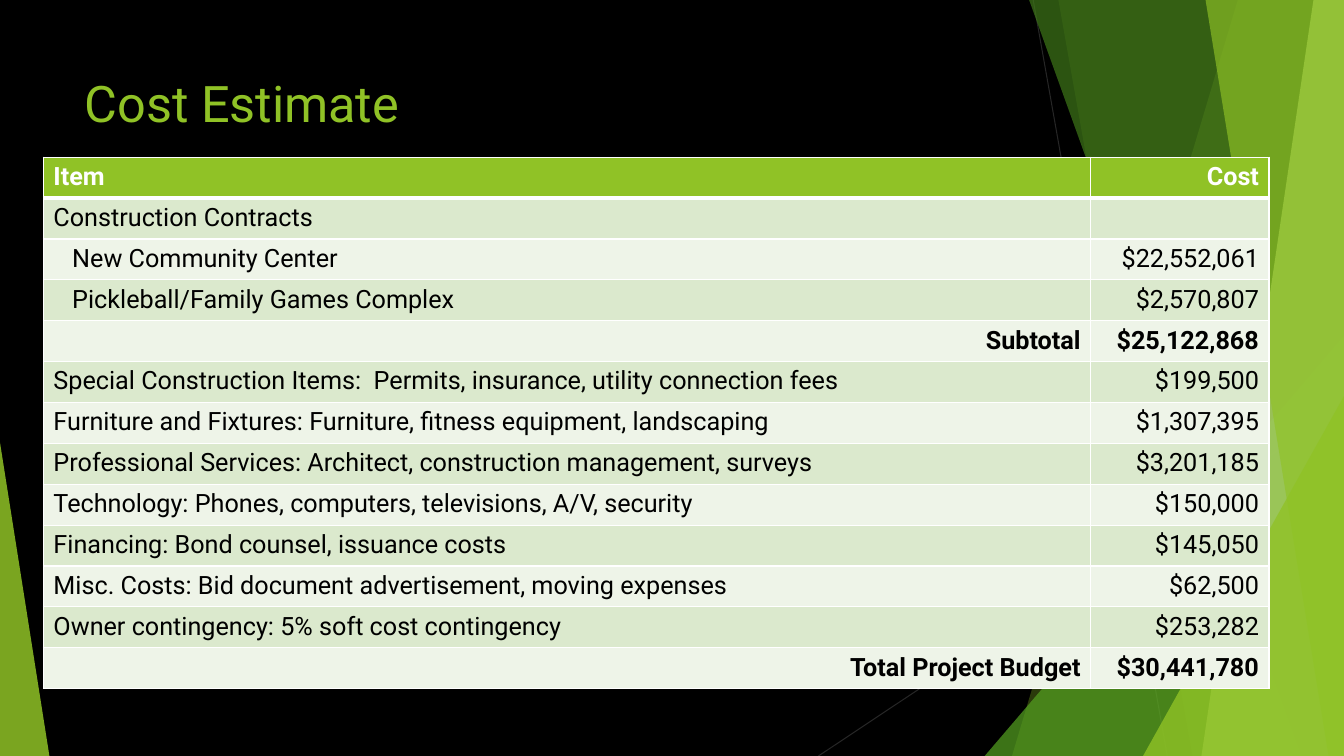
from dataclasses import dataclass

from lxml import etree
from pptx import Presentation
from pptx import util as u
from pptx.dml.color import RGBColor
from pptx.enum import shapes, text
from pptx.oxml import ns


@dataclass(frozen=True)
class Theme:
    font: str = "Roboto"
    title_size: float = 36
    body_size: float = 18
    background: str = "000000"
    dark: str = "000000"
    light: str = "FFFFFF"
    hairline: str = "262626"
    lime: str = "90C226"
    leaf: str = "54A021"
    forest: str = "3F7819"
    pale: str = "C0E474"
    stripes: tuple = ("DBE9CD", "EEF4E8")


THEME = Theme()
WIDTH, HEIGHT = 960, 540

HAIRLINES = [(738, 0, 833.8, 540), (960, 290.2, 584.6, 540)]
BACK_BANDS = [(884.2, 722.9, THEME.lime, 30), (756, 851.8, THEME.lime, 20)]
FRONT_BANDS = [
    (735.1, 929.5, THEME.forest, 70),
    (938.2, 858.2, THEME.pale, 70),
    (861.1, 949, THEME.lime, 65),
]
BACK_TRIANGLES = [(703.4, 239.8, 256.6, 1, THEME.leaf, 72)]
FRONT_TRIANGLES = [
    (816.5, 283, 143.5, 1, THEME.lime, 80),
    (0, 316.1, 35.3, 0, THEME.lime, 85),
]

COLUMN_WIDTHS = (748.1, 127.4)
ROW_HEIGHT = 29.2
CELL_MARGIN, INDENTED_MARGIN = 7.2, 20.6
COSTS = [
    ("Item", "Cost", "header"),
    ("Construction Contracts", "", "item"),
    ("New Community Center", "$22,552,061", "subitem"),
    ("Pickleball/Family Games Complex", "$2,570,807", "subitem"),
    ("Subtotal", "$25,122,868", "total"),
    ("Special Construction Items:  Permits, insurance, utility connection fees", "$199,500", "item"),
    ("Furniture and Fixtures: Furniture, fitness equipment, landscaping", "$1,307,395", "item"),
    ("Professional Services: Architect, construction management, surveys", "$3,201,185", "item"),
    ("Technology: Phones, computers, televisions, A/V, security", "$150,000", "item"),
    ("Financing: Bond counsel, issuance costs", "$145,050", "item"),
    ("Misc. Costs: Bid document advertisement, moving expenses", "$62,500", "item"),
    ("Owner contingency: 5% soft cost contingency", "$253,282", "item"),
    ("Total Project Budget", "$30,441,780", "total"),
]


def apply_format(target, values):
    for name, value in values.items():
        setattr(target, name, value)


def write_text(paragraph, words, size, color, bold=False):
    run = paragraph.add_run()
    run.text = words
    apply_format(run.font, {"name": THEME.font, "size": u.Pt(size), "bold": bold})
    run.font.color.rgb = RGBColor.from_string(color)


def paint(shape, color, opacity):
    shape.shadow.inherit = False
    shape.line.fill.background()
    shape.fill.solid()
    shape.fill.fore_color.rgb = RGBColor.from_string(color)
    color_element = shape.fill._xPr.find(".//" + ns.qn("a:srgbClr"))
    etree.SubElement(color_element, ns.qn("a:alpha"), val=str(opacity * 1000))


def add_hairline(slide, *ends):
    line = slide.shapes.add_connector(
        shapes.MSO_CONNECTOR.STRAIGHT, *[u.Pt(end) for end in ends]
    )
    line.line.color.rgb = RGBColor.from_string(THEME.hairline)
    line.line.width = u.Pt(0.75)
    etree.SubElement(line._element.spPr, ns.qn("a:effectLst"))


def add_band(slide, top_left, bottom_left, color, opacity):
    builder = slide.shapes.build_freeform(u.Pt(top_left), 0)
    corners = [(WIDTH, 0), (WIDTH, HEIGHT), (bottom_left, HEIGHT)]
    builder.add_line_segments([(u.Pt(x), u.Pt(y)) for x, y in corners], close=True)
    paint(builder.convert_to_shape(), color, opacity)


def add_triangle(slide, left, top, width, apex, color, opacity):
    box = (left, top, width, HEIGHT - top)
    triangle = slide.shapes.add_shape(
        shapes.MSO_SHAPE.ISOSCELES_TRIANGLE, *[u.Pt(length) for length in box]
    )
    triangle.adjustments[0] = apex
    paint(triangle, color, opacity)


def add_backdrop(slide):
    slide.background.fill.solid()
    slide.background.fill.fore_color.rgb = RGBColor.from_string(THEME.background)
    layers = [
        (add_hairline, HAIRLINES),
        (add_band, BACK_BANDS),
        (add_triangle, BACK_TRIANGLES),
        (add_band, FRONT_BANDS),
        (add_triangle, FRONT_TRIANGLES),
    ]
    for add_element, items in layers:
        for item in items:
            add_element(slide, *item)


def add_borders(cell, widths):
    properties = cell._tc.get_or_add_tcPr()
    for side, width in widths.items():
        line = etree.SubElement(properties, ns.qn(f"a:ln{side}"), w=str(u.Pt(width)))
        fill = etree.SubElement(line, ns.qn("a:solidFill"))
        etree.SubElement(fill, ns.qn("a:srgbClr"), val=THEME.light)


def fill_cell(cell, words, row, column, kind):
    header = kind == "header"
    add_borders(cell, {"L": 1, "R": 1, "T": 3 if row == 1 else 1, "B": 3 if header else 1})
    cell.fill.solid()
    cell.fill.fore_color.rgb = RGBColor.from_string(
        THEME.lime if header else THEME.stripes[(row - 1) % 2]
    )
    indented = kind == "subitem" and column == 0
    apply_format(cell, {
        "margin_left": u.Pt(INDENTED_MARGIN if indented else CELL_MARGIN),
        "margin_right": u.Pt(CELL_MARGIN),
        "margin_top": u.Pt(3.6),
        "margin_bottom": u.Pt(3.6),
    })
    paragraph = cell.text_frame.paragraphs[0]
    if column == 1 or kind == "total":
        paragraph.alignment = text.PP_ALIGN.RIGHT
    if words:
        write_text(paragraph, words, THEME.body_size,
                   THEME.light if header else THEME.dark, kind in ("header", "total"))


def add_cost_table(slide, left, top):
    frame = slide.shapes.add_table(
        len(COSTS), len(COLUMN_WIDTHS), u.Pt(left), u.Pt(top),
        u.Pt(sum(COLUMN_WIDTHS)), u.Pt(ROW_HEIGHT * len(COSTS)),
    )
    table = frame.table
    for column, width in zip(table.columns, COLUMN_WIDTHS):
        column.width = u.Pt(width)
    for row, (item, cost, kind) in enumerate(COSTS):
        table.rows[row].height = u.Pt(ROW_HEIGHT)
        for column, words in enumerate((item, cost)):
            fill_cell(table.cell(row, column), words, row, column, kind)


def add_title(slide, words, *box):
    title = slide.shapes.add_textbox(*[u.Pt(length) for length in box])
    apply_format(title.text_frame, {
        "word_wrap": True,
        "vertical_anchor": text.MSO_ANCHOR.TOP,
    })
    write_text(title.text_frame.paragraphs[0], words, THEME.title_size, THEME.lime)


def main():
    presentation = Presentation()
    apply_format(presentation, {"slide_width": u.Pt(WIDTH), "slide_height": u.Pt(HEIGHT)})
    slide = presentation.slides.add_slide(presentation.slide_layouts[6])
    add_backdrop(slide)
    add_cost_table(slide, 31, 112.3)
    add_title(slide, "Cost Estimate", 53.3, 48.2, 303.1, 103.7)
    presentation.save("out.pptx")


if __name__ == "__main__":
    main()
